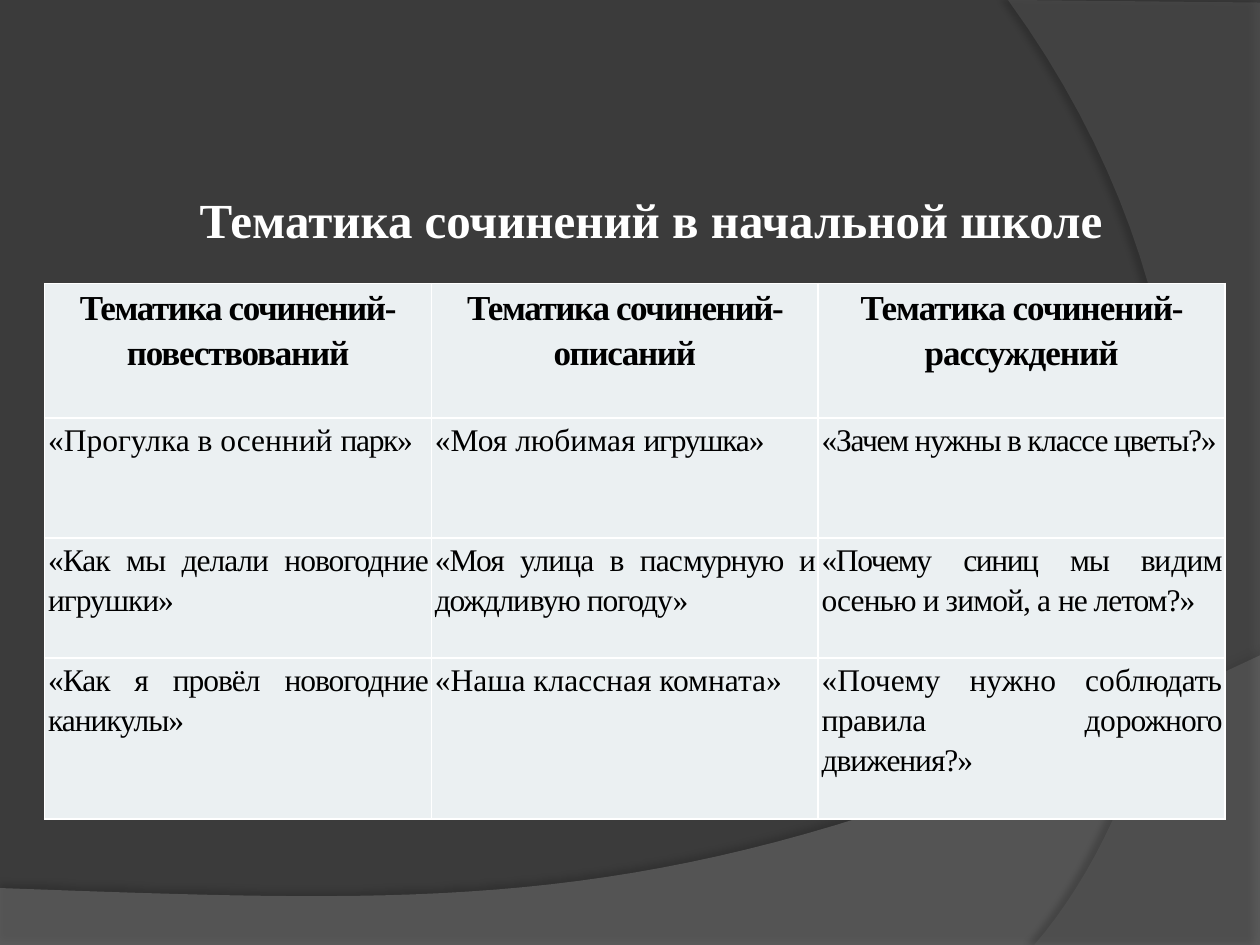
from lxml import etree
from pptx import Presentation
from pptx.dml.color import RGBColor
from pptx.enum.text import MSO_ANCHOR, PP_ALIGN
from pptx.oxml import parse_xml
from pptx.oxml.ns import nsdecls, qn
from pptx.util import Pt

COLORS = {
    "background": "3B3B3B", "bottom_wave": "7F7F7F", "right_wave": "5E5E5E",
    "title": "FFFFFF", "cell": "EBF0F2", "text": "000000",
    "border": "FFFFFF", "shadow": "000000",
}
FONT = "Times New Roman"
WIDTH, HEIGHT = 720, 540
CURVE_STEPS = 40

COLUMN_WIDTHS = [221, 221, 232.5]
ROW_HEIGHTS = [77, 68.5, 68.5, 92]
# Each cell is a list of (text, letter spacing in points).
ROWS = [
    [[("Тематика сочинений-", -0.8), ("повествований", -0.7)],
     [("Тематика сочинений-описаний", -0.8)],
     [("Тематика сочинений-рассуждений", -0.6)]],
    [[("«Прогулка в осенний ", 0), ("парк»", -0.8)],
     [("«Моя любимая ", 0), ("игрушка»", -0.7)],
     [("«Зачем нужны в классе цветы?»", -0.7)]],
    [[("«Как мы делали новогодние игрушки»", -0.6)],
     [("«Моя улица в пас", -0.5), ("мурную и дождли", -0.7), ("вую погоду»", -0.6)],
     [("«Почему синиц мы ви", -0.8), ("дим осенью и зимой, а ", -0.5),
      ("не летом?»", -0.6)]],
    [[("«Как я провёл новогодние каникулы»", -0.6)],
     [("«Наша классная комната»", 0)],
     [("«Почему нужно со", 0), ("блюдать правила до", -0.3),
      ("рожного движения?»", -0.6)]],
]


def rgb(name):
    return RGBColor.from_string(COLORS[name])


def bezier(*controls):
    """Return points along a cubic curve, without its start point."""
    points = []
    for step in range(1, CURVE_STEPS + 1):
        t = step / CURVE_STEPS
        weights = ((1 - t) ** 3, 3 * t * (1 - t) ** 2, 3 * t * t * (1 - t), t ** 3)
        points.append(tuple(sum(w * c[axis] for w, c in zip(weights, controls))
                            for axis in (0, 1)))
    return points


def add_wave(slide, box, points, color, opacity, shadow):
    left, top = box
    vertices = [(Pt(left + x), Pt(top + y)) for x, y in points]
    builder = slide.shapes.build_freeform(*vertices[0])
    builder.add_line_segments(vertices[1:], close=True)
    shape = builder.convert_to_shape()
    shape.line.fill.background()
    shape.fill.solid()
    shape.fill.fore_color.rgb = rgb(color)
    properties = shape.element.spPr
    fill_color = properties.find(qn("a:solidFill"))[0]
    etree.SubElement(fill_color, qn("a:alpha"), val=str(opacity * 1000))
    shadow_opacity, blur, distance, angle = shadow
    properties.append(parse_xml(
        f'<a:effectLst {nsdecls("a")}><a:outerShdw blurRad="{Pt(blur)}" '
        f'dist="{Pt(distance)}" dir="{angle * 60000}" algn="ctr" rotWithShape="0">'
        f'<a:srgbClr val="{COLORS["shadow"]}"><a:alpha val="{shadow_opacity * 1000}"/>'
        f'</a:srgbClr></a:outerShdw></a:effectLst>'))


def add_background(slide, left, top):
    slide.background.fill.solid()
    slide.background.fill.fore_color.rgb = rgb("background")
    bottom_curve = bezier((WIDTH, 374.5), (402.5, 525), (281.5, 517.5), (0, 507.5))
    add_wave(slide, (left, top),
             [(0, HEIGHT), (WIDTH, HEIGHT), (WIDTH, 374.5)] + bottom_curve,
             "bottom_wave", 45, (35, 4, 3.5, 270))
    right_curve = bezier((591, HEIGHT), (673, 445.5), (733, 216), (576, 0))
    add_wave(slide, (left, top),
             [(WIDTH, 1.5), (WIDTH, HEIGHT), (591, HEIGHT)] + right_curve,
             "right_wave", 40, (45, 4, 4, 180))


def add_run(paragraph, text, size, bold, color, spacing=0):
    run = paragraph.add_run()
    run.text = text
    for name, value in {"name": FONT, "size": Pt(size), "bold": bold}.items():
        setattr(run.font, name, value)
    run.font.color.rgb = rgb(color)
    if spacing:
        run.font._element.set("spc", str(round(spacing * 100)))


def add_title(slide, left, top, width, height):
    frame = slide.shapes.add_textbox(Pt(left), Pt(top), Pt(width), Pt(height)).text_frame
    settings = {"word_wrap": True, "vertical_anchor": MSO_ANCHOR.MIDDLE,
                "margin_left": Pt(3.6), "margin_right": Pt(3.6),
                "margin_top": 0, "margin_bottom": 0}
    for name, value in settings.items():
        setattr(frame, name, value)
    paragraph = frame.paragraphs[0]
    paragraph.alignment = PP_ALIGN.CENTER
    add_run(paragraph, "Тематика сочинений в начальной школе", 28, True, "title")


def add_borders(cell):
    properties = cell._tc.get_or_add_tcPr()
    for index, side in enumerate(("lnL", "lnR", "lnT", "lnB")):
        properties.insert(index, parse_xml(
            f'<a:{side} {nsdecls("a")} w="{Pt(1)}"><a:solidFill>'
            f'<a:srgbClr val="{COLORS["border"]}"/></a:solidFill></a:{side}>'))


def fill_cell(cell, runs, is_header):
    margins = {"margin_left": Pt(2), "margin_right": Pt(2),
               "margin_top": 0, "margin_bottom": 0}
    for name, value in margins.items():
        setattr(cell, name, value)
    cell.fill.solid()
    cell.fill.fore_color.rgb = rgb("cell")
    add_borders(cell)
    paragraph = cell.text_frame.paragraphs[0]
    paragraph.alignment = PP_ALIGN.CENTER if is_header else PP_ALIGN.JUSTIFY
    paragraph.line_spacing = 1.15
    for text, spacing in runs:
        add_run(paragraph, text, 20 if is_header else 18, is_header, "text", spacing)


def add_topics_table(slide, left, top):
    table = slide.shapes.add_table(
        len(ROWS), len(COLUMN_WIDTHS), Pt(left), Pt(top),
        Pt(sum(COLUMN_WIDTHS)), Pt(sum(ROW_HEIGHTS))).table
    table.horz_banding = False
    for column, width in zip(table.columns, COLUMN_WIDTHS):
        column.width = Pt(width)
    for row_index, (row, height) in enumerate(zip(table.rows, ROW_HEIGHTS)):
        row.height = Pt(height)
        for cell, runs in zip(row.cells, ROWS[row_index]):
            fill_cell(cell, runs, row_index == 0)


def main():
    presentation = Presentation()
    presentation.slide_width, presentation.slide_height = Pt(WIDTH), Pt(HEIGHT)
    slide = presentation.slides.add_slide(presentation.slide_layouts[6])
    add_background(slide, 0, 0)
    add_title(slide, 48, 108, 648, 34)
    add_topics_table(slide, 25.5, 162)
    presentation.save("out.pptx")


if __name__ == "__main__":
    main()
